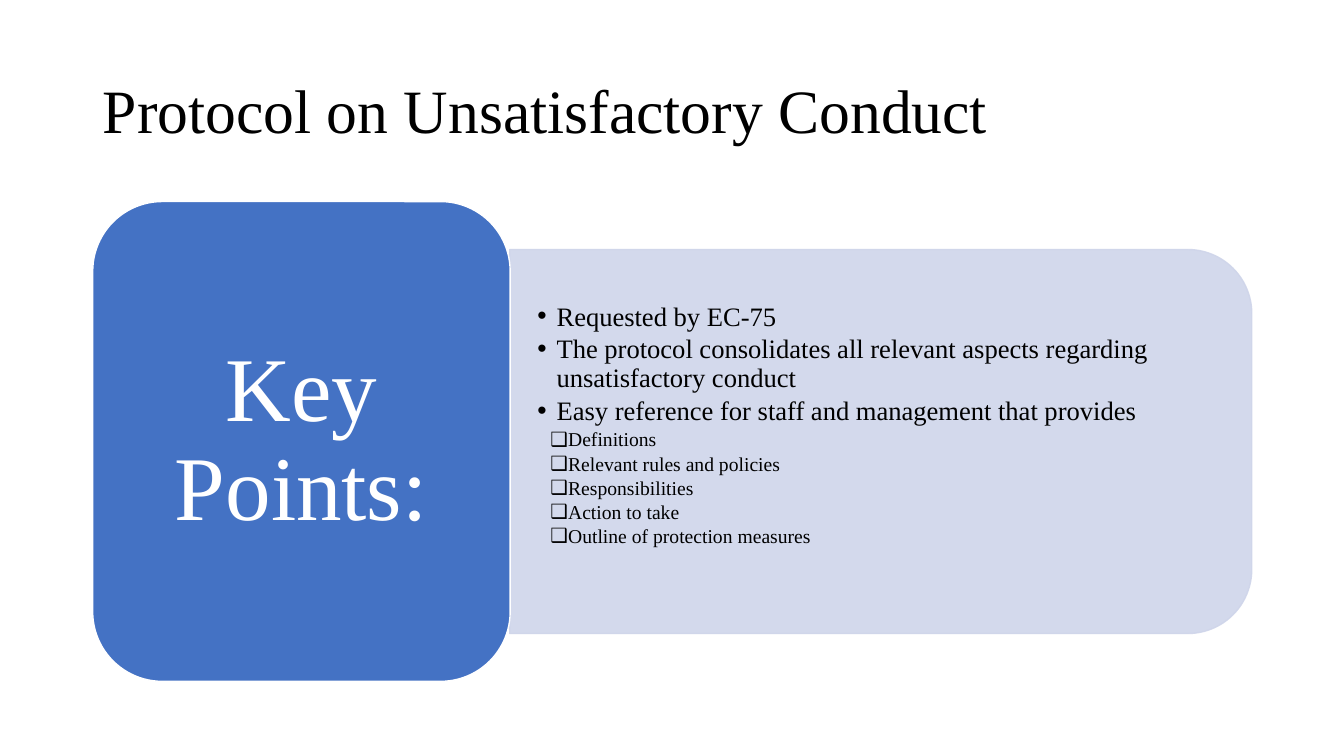
from dataclasses import dataclass

from lxml.etree import SubElement
from pptx import Presentation
from pptx.dml.color import RGBColor
from pptx.enum.shapes import MSO_SHAPE as Preset
from pptx.enum.text import MSO_ANCHOR as Anchor, MSO_AUTO_SIZE as AutoSize, PP_ALIGN as Align
from pptx.oxml.ns import qn
from pptx.util import Pt

EMU_PER_PX = 9144  # 100 px to the inch
FONT = "Times New Roman"
BLACK = RGBColor(0x00, 0x00, 0x00)
WHITE = RGBColor(0xFF, 0xFF, 0xFF)
BLUE = RGBColor(0x44, 0x72, 0xC4)
PALE_BLUE = RGBColor(0xCF, 0xD5, 0xEA)


@dataclass(frozen=True)
class Box:
    left: int
    top: int
    width: int
    height: int


@dataclass(frozen=True)
class Bullet:
    char: str
    size: int
    indent: int
    hanging: int
    level: int


@dataclass(frozen=True)
class Block:
    preset: Preset
    box: Box
    fill: RGBColor
    line: RGBColor
    rotation: int = 0
    opacity: int = 100


POINT = Bullet("•", 19, 19, 19, 0)
CHECK = Bullet("❑", 14, 25, 12, 1)
KEY_POINTS = [
    (POINT, "Requested by EC-75"),
    (POINT, "The protocol consolidates all relevant aspects regarding unsatisfactory conduct"),
    (POINT, "Easy reference for staff and management that provides"),
    (CHECK, "Definitions"),
    (CHECK, "Relevant rules and policies"),
    (CHECK, "Responsibilities"),
    (CHECK, "Action to take"),
    (CHECK, "Outline of protection measures"),
]
DETAIL_PANEL = Block(Preset.ROUND_2_SAME_RECTANGLE, Box(683, 70, 381, 736),
                     PALE_BLUE, PALE_BLUE, rotation=90, opacity=90)
LABEL_PANEL = Block(Preset.ROUNDED_RECTANGLE, Box(92, 200, 414, 476), BLUE, WHITE)


def px(length: int) -> int:
    return length * EMU_PER_PX


def place(shape, box: Box) -> None:
    shape.left, shape.top = px(box.left), px(box.top)
    shape.width, shape.height = px(box.width), px(box.height)


def set_frame(frame, side: int, edge: int) -> None:
    """Centre the text vertically within fixed insets."""
    frame.word_wrap = True
    frame.auto_size = AutoSize.NONE
    frame.vertical_anchor = Anchor.MIDDLE
    frame.margin_left = frame.margin_right = px(side)
    frame.margin_top = frame.margin_bottom = px(edge)


def write(paragraph, text: str, *, size: int, color: RGBColor = BLACK,
          align: Align = Align.LEFT, space_after: float = 0) -> None:
    run = paragraph.add_run()
    run.text = text
    run.font.name = FONT
    run.font.size = Pt(size)
    run.font.color.rgb = color
    paragraph.alignment = align
    paragraph.line_spacing = 0.9
    paragraph.space_before = Pt(0)
    paragraph.space_after = Pt(space_after)


def add_bullet(paragraph, bullet: Bullet) -> None:
    paragraph.level = bullet.level
    properties = paragraph._p.get_or_add_pPr()
    properties.set("marL", str(px(bullet.indent)))
    properties.set("indent", str(-px(bullet.hanging)))
    SubElement(properties, qn("a:buChar"), char=bullet.char)


def add_block(slide, block: Block):
    box = block.box
    shape = slide.shapes.add_shape(block.preset, px(box.left), px(box.top),
                                   px(box.width), px(box.height))
    shape.rotation = block.rotation
    shape.shadow.inherit = False
    shape.fill.solid()
    shape.fill.fore_color.rgb = block.fill
    shape.line.color.rgb = block.line
    shape.line.width = Pt(1)
    if block.opacity < 100:
        for color in shape._element.spPr.iter(qn("a:srgbClr")):
            SubElement(color, qn("a:alpha"), val=str(block.opacity * 1000))
    return shape


def main() -> None:
    deck = Presentation()
    deck.slide_width, deck.slide_height = px(1333), px(750)
    slide = deck.slides.add_slide(deck.slide_layouts[1])

    title = slide.shapes.title
    place(title, Box(92, 40, 1150, 145))
    set_frame(title.text_frame, side=10, edge=5)
    write(title.text_frame.paragraphs[0], "Protocol on Unsatisfactory Conduct", size=44)

    details = slide.placeholders[1]
    place(details, Box(506, 266, 717, 312))
    set_frame(details.text_frame, side=27, edge=14)
    for index, (bullet, text) in enumerate(KEY_POINTS):
        frame = details.text_frame
        paragraph = frame.add_paragraph() if index else frame.paragraphs[0]
        write(paragraph, text, size=bullet.size, space_after=bullet.size * 0.15)
        add_bullet(paragraph, bullet)

    panel = add_block(slide, DETAIL_PANEL)
    details._element.addprevious(panel._element)

    label = add_block(slide, LABEL_PANEL)
    set_frame(label.text_frame, side=27, edge=14)
    write(label.text_frame.paragraphs[0], "Key Points:", size=65, color=WHITE,
          align=Align.CENTER)

    deck.save("out.pptx")


if __name__ == "__main__":
    main()
